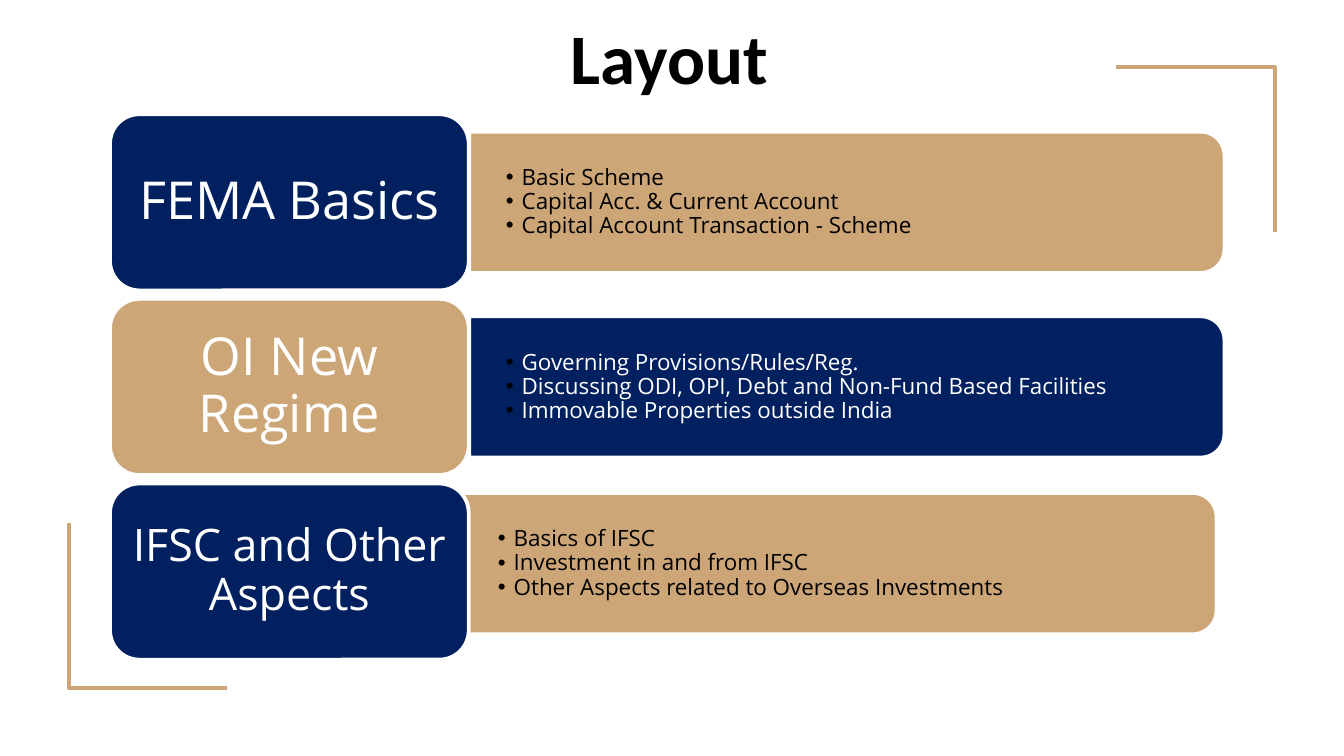
from dataclasses import dataclass

from lxml.etree import SubElement
from pptx import Presentation
from pptx.dml.color import RGBColor
from pptx.enum.shapes import MSO_SHAPE
from pptx.enum.text import MSO_ANCHOR, PP_ALIGN
from pptx.oxml.ns import qn
from pptx.util import Cm, Pt

HUES = {"navy": "002060", "tan": "CCA677", "white": "FFFFFF", "black": "000000"}
LEFT, TOP, STEP = 2.08, 2.16, 3.49
CARD_W, CARD_H = 6.78, 3.33
BAR_X, BAR_W, BAR_H = 8.87, 14.27, 2.67
TEXT_W, TEXT_H = 14.15, 2.41


@dataclass
class Row:
    head: str
    points: list[str]
    card: str
    bar: str
    ink: str
    size: int = 28
    pad: tuple[float, float] = (0.3, 0.15)
    shift: float = 0


ROWS = [
    Row("FEMA Basics",
        ["Basic Scheme", "Capital Acc. & Current Account",
         "Capital Account Transaction - Scheme"],
        "navy", "tan", "black"),
    Row("OI New Regime",
        ["Governing Provisions/Rules/Reg.",
         "Discussing ODI, OPI, Debt and Non-Fund Based Facilities",
         "Immovable Properties outside India"],
        "tan", "navy", "white"),
    Row("IFSC and Other Aspects",
        ["Basics of IFSC", "Investment in and from IFSC",
         "Other Aspects related to Overseas Investments"],
        "navy", "tan", "black", 24, (0.25, 0.13), -0.15),
]


def tint(name: str) -> RGBColor:
    return RGBColor.from_string(HUES[name])


def set_frame(frame, pad: tuple[float, float], anchor: MSO_ANCHOR) -> None:
    frame.word_wrap = True
    frame.vertical_anchor = anchor
    frame.margin_left = frame.margin_right = Cm(pad[0])
    frame.margin_top = frame.margin_bottom = Cm(pad[1])


def set_font(para, face: str, size: int, hue: str, bold: bool = False) -> None:
    for run in para.runs:
        run.font.name = face
        run.font.size = Pt(size)
        run.font.bold = bold
        run.font.color.rgb = tint(hue)


def add_block(slide, kind: MSO_SHAPE, x: float, y: float, w: float, h: float, hue: str):
    block = slide.shapes.add_shape(kind, Cm(x), Cm(y), Cm(w), Cm(h))
    block.shadow.inherit = False
    block.fill.solid()
    block.fill.fore_color.rgb = tint(hue)
    block.line.color.rgb = tint("white")
    block.line.width = Pt(2)
    return block


def add_bullet(para) -> None:
    props = para._p.get_or_add_pPr()
    props.set("marL", str(Cm(0.3)))
    props.set("indent", str(Cm(-0.3)))
    color = SubElement(props, qn("a:buClr"))
    SubElement(color, qn("a:srgbClr"), val=HUES["black"])
    SubElement(props, qn("a:buFont"), typeface="Arial")
    SubElement(props, qn("a:buChar"), char="•")


def add_bar(slide, row: Row, mid: float) -> None:
    x, mid = BAR_X + row.shift, mid + row.shift
    bar = add_block(slide, MSO_SHAPE.ROUND_2_SAME_RECTANGLE,
                    x + (BAR_W - BAR_H) / 2, mid - BAR_W / 2, BAR_H, BAR_W, row.bar)
    bar.rotation = 90
    box = slide.shapes.add_textbox(Cm(x), Cm(mid - TEXT_H / 2), Cm(TEXT_W), Cm(TEXT_H))
    frame = box.text_frame
    set_frame(frame, (0.69, 0.36), MSO_ANCHOR.MIDDLE)
    frame.text = "\n".join(row.points)
    for para in frame.paragraphs:
        para.line_spacing = 0.9
        add_bullet(para)
        set_font(para, "Open Sans", 12, row.ink)


def add_card(slide, row: Row, mid: float) -> None:
    card = add_block(slide, MSO_SHAPE.ROUNDED_RECTANGLE,
                     LEFT, mid - CARD_H / 2, CARD_W, CARD_H, row.card)
    frame = card.text_frame
    set_frame(frame, row.pad, MSO_ANCHOR.MIDDLE)
    frame.text = row.head
    para = frame.paragraphs[0]
    para.alignment = PP_ALIGN.CENTER
    para.line_spacing = 0.9
    set_font(para, "Open Sans", row.size, "white")


def add_bracket(slide, x: float, y: float, dx: float, dy: float) -> None:
    pen = slide.shapes.build_freeform(Cm(x), Cm(y + dy))
    pen.add_line_segments([(Cm(x), Cm(y)), (Cm(x + dx), Cm(y))], close=False)
    shape = pen.convert_to_shape()
    shape.shadow.inherit = False
    shape.fill.background()
    shape.line.color.rgb = tint("tan")
    shape.line.width = Pt(2.25)


def add_title(slide, text: str) -> None:
    box = slide.shapes.add_textbox(Cm(2.87), Cm(0), Cm(19.56), Cm(1.78))
    frame = box.text_frame
    set_frame(frame, (0.25, 0.25), MSO_ANCHOR.TOP)
    frame.text = text
    para = frame.paragraphs[0]
    para.alignment = PP_ALIGN.CENTER
    set_font(para, "Calibri", 38, "black", True)


def main() -> None:
    deck = Presentation()
    deck.slide_width, deck.slide_height = Cm(25.4), Cm(14.29)
    slide = deck.slides.add_slide(deck.slide_layouts[6])
    add_bracket(slide, 24.1, 1.27, -3, 3.12)
    add_bracket(slide, 1.3, 13, 3, -3.12)
    add_title(slide, "Layout")
    for i, row in enumerate(ROWS):
        mid = TOP + i * STEP + CARD_H / 2
        add_bar(slide, row, mid)
        add_card(slide, row, mid)
    deck.save("out.pptx")


if __name__ == "__main__":
    main()
